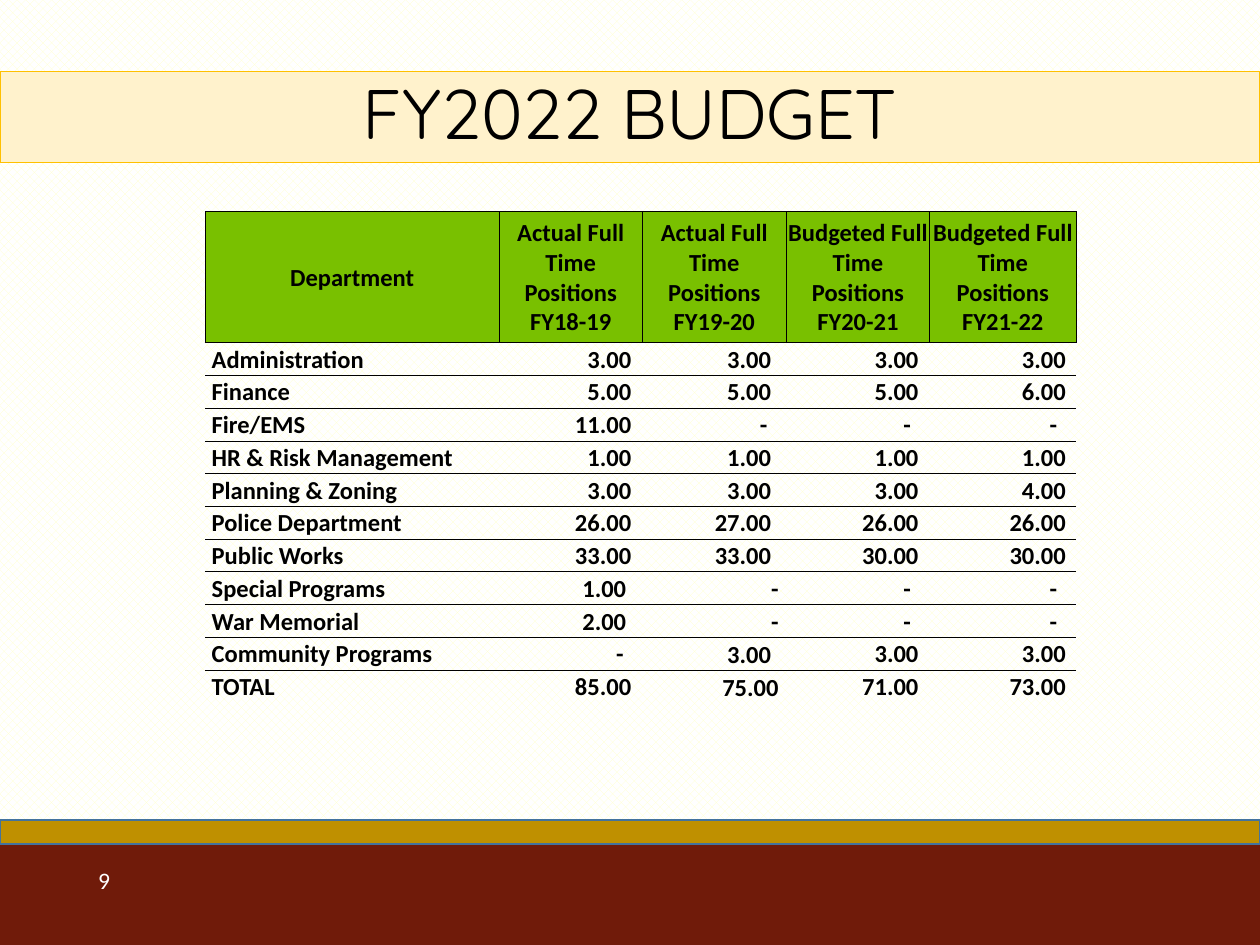
from lxml.etree import SubElement
from pptx import Presentation
from pptx.dml.color import RGBColor
from pptx.enum.dml import MSO_PATTERN
from pptx.enum.shapes import MSO_SHAPE
from pptx.enum.text import MSO_ANCHOR, PP_ALIGN
from pptx.oxml.ns import qn
from pptx.util import Inches, Pt

BLACK = RGBColor(0x00, 0x00, 0x00)
WHITE = RGBColor(0xFF, 0xFF, 0xFF)
IVORY = RGBColor(0xFF, 0xFF, 0xCC)
CREAM = RGBColor(0xFF, 0xF2, 0xCC)
AMBER = RGBColor(0xFF, 0xC0, 0x00)
GREEN = RGBColor(0x79, 0xC0, 0x00)
MAROON = RGBColor(0x70, 0x1B, 0x0A)
GOLD = RGBColor(0xBF, 0x90, 0x00)
BLUE = RGBColor(0x43, 0x73, 0x9E)

HEADINGS = ["Department", "Actual Full Time Positions FY18-19",
            "Actual Full Time Positions FY19-20",
            "Budgeted Full Time Positions FY20-21",
            "Budgeted Full Time Positions FY21-22"]
POSITIONS = [
    ["Administration", "3.00", "3.00", "3.00", "3.00"],
    ["Finance", "5.00", "5.00", "5.00", "6.00"],
    ["Fire/EMS", "11.00", "-", "-", "-"],
    ["HR & Risk Management", "1.00", "1.00", "1.00", "1.00"],
    ["Planning & Zoning", "3.00", "3.00", "3.00", "4.00"],
    ["Police Department", "26.00", "27.00", "26.00", "26.00"],
    ["Public Works", "33.00", "33.00", "30.00", "30.00"],
    ["Special Programs", "1.00", "-", "-", "-"],
    ["War Memorial", "2.00", "-", "-", "-"],
    ["Community Programs", "-", "3.00", "3.00", "3.00"],
    ["TOTAL", "85.00", "75.00", "71.00", "73.00"],
]
COLUMN_WIDTHS = [2.33, 1.14, 1.14, 1.14, 1.16]
HEADER_HEIGHT, ROW_HEIGHT = 1.04, 0.26
# Right indents in inches: one per number column, one for dashes, and exceptions
NUMBER_INDENTS = [0, 0.09, 0.12, 0.09, 0.08]
DASH_INDENT = 0.15
SPECIAL_INDENTS = {(8, 1): 0.13, (9, 1): 0.13, (8, 2): 0.06, (9, 2): 0.06, (11, 2): 0.06}
LOWERED_CELLS = [(10, 2), (11, 2)]


def add_run(paragraph, text, size, font_name, color, bold=False):
    run = paragraph.add_run()
    run.text = text
    run.font.size = Pt(size)
    run.font.name = font_name
    run.font.bold = bold
    run.font.color.rgb = color


def set_borders(cell, visible_sides):
    properties = cell._tc.get_or_add_tcPr()
    for position, side in enumerate("LRTB"):
        border = SubElement(properties, qn(f"a:ln{side}"), w=str(Pt(0.5)))
        if side in visible_sides:
            fill = SubElement(border, qn("a:solidFill"))
            SubElement(fill, qn("a:srgbClr"), val=str(BLACK))
        else:
            SubElement(border, qn("a:noFill"))
        properties.insert(position, border)


presentation = Presentation()
presentation.slide_width = Inches(10)
presentation.slide_height = Inches(7.5)
W, H = presentation.slide_width, presentation.slide_height
slide = presentation.slides.add_slide(presentation.slide_layouts[5])

# Patterned background
backdrop = slide.background.fill
backdrop.patterned()
backdrop.pattern = MSO_PATTERN.PERCENT_50
backdrop.fore_color.rgb = IVORY
backdrop.back_color.rgb = WHITE

# Footer bands
for top, height, color in [(6.7, 0.8, MAROON), (6.51, 0.19, GOLD)]:
    band = slide.shapes.add_shape(MSO_SHAPE.RECTANGLE, 0, Inches(top), W, Inches(height))
    band.shadow.inherit = False
    band.fill.solid()
    band.fill.fore_color.rgb = color
    if color == GOLD:
        band.line.color.rgb = BLUE
        band.line.width = Pt(1)
    else:
        band.line.fill.background()

# Page number
page_number = slide.shapes.add_textbox(int(W * 0.068), Inches(6.82), Inches(0.78), Inches(0.4))
page_number.text_frame.word_wrap = True
add_run(page_number.text_frame.paragraphs[0], "9", 13.5, "Calibri", WHITE)

# Title band
title = slide.shapes.title
title.left, title.top, title.width, title.height = 0, Inches(0.57), W, Inches(0.72)
title.fill.solid()
title.fill.fore_color.rgb = CREAM
title.line.color.rgb = AMBER
title.line.width = Pt(0.75)
title.text_frame.vertical_anchor = MSO_ANCHOR.MIDDLE
heading = title.text_frame.paragraphs[0]
heading.alignment = PP_ALIGN.CENTER
heading.line_spacing = 0.9
add_run(heading, "FY2022 BUDGET", 40, "Quicksand", BLACK)

# Staffing table
rows = [HEADINGS] + POSITIONS
staffing = slide.shapes.add_table(
    len(rows), len(HEADINGS), Inches(1.63), Inches(1.68), Inches(sum(COLUMN_WIDTHS)),
    Inches(HEADER_HEIGHT + ROW_HEIGHT * len(POSITIONS))).table
staffing.first_row = False
staffing.horz_banding = False
for column, width in zip(staffing.columns, COLUMN_WIDTHS):
    column.width = Inches(width)

for r, row in enumerate(rows):
    staffing.rows[r].height = Inches(HEADER_HEIGHT if r == 0 else ROW_HEIGHT)
    for c, text in enumerate(row):
        cell = staffing.cell(r, c)
        cell.margin_left = cell.margin_right = cell.margin_top = Inches(0.01)
        cell.margin_bottom = 0
        cell.vertical_anchor = (
            MSO_ANCHOR.BOTTOM if (r, c) in LOWERED_CELLS else MSO_ANCHOR.MIDDLE)
        paragraph = cell.text_frame.paragraphs[0]
        if r == 0:
            paragraph.alignment = PP_ALIGN.CENTER
            cell.fill.solid()
            cell.fill.fore_color.rgb = GREEN
            set_borders(cell, "LRTB")
        else:
            cell.fill.background()
            set_borders(cell, "T" if r == len(POSITIONS) else "TB")
            if c == 0:
                paragraph.alignment = PP_ALIGN.LEFT
                cell.margin_left = Inches(0.05)
            else:
                paragraph.alignment = PP_ALIGN.RIGHT
                usual_indent = DASH_INDENT if text == "-" else NUMBER_INDENTS[c]
                cell.margin_right = Inches(SPECIAL_INDENTS.get((r, c), usual_indent))
        add_run(paragraph, text, 14, "Calibri", BLACK, bold=True)

presentation.save("out.pptx")
